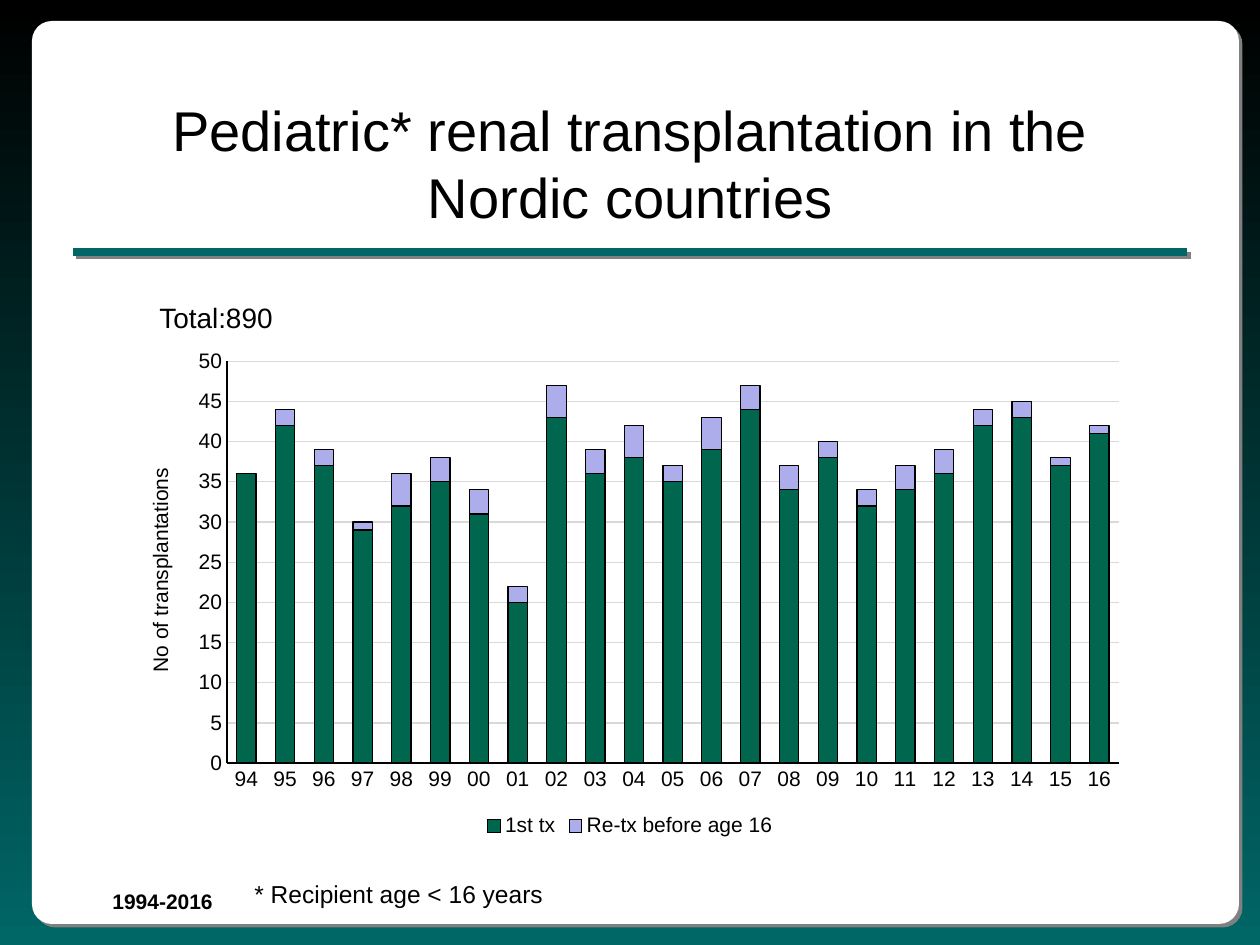
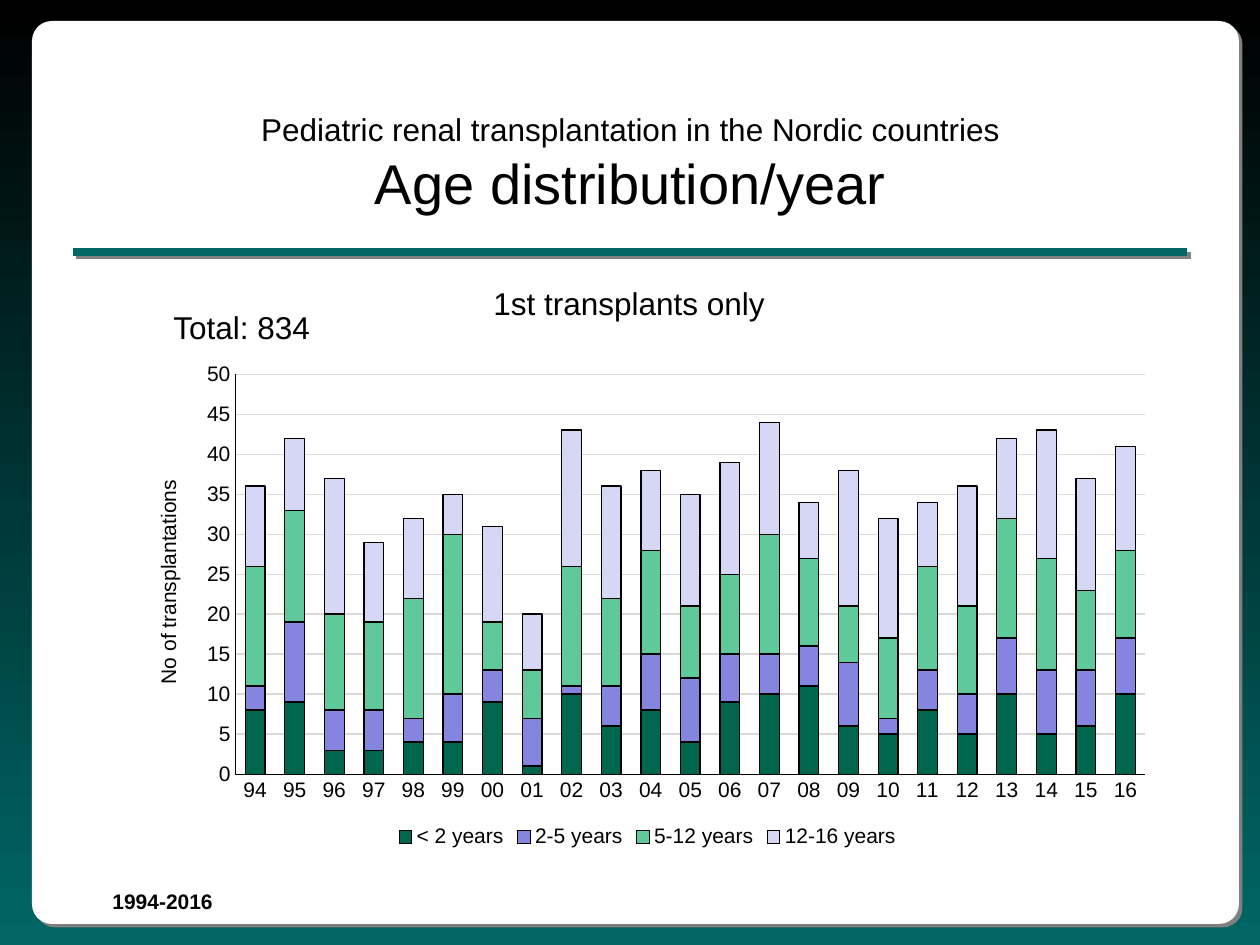
from dataclasses import dataclass

from lxml.etree import SubElement
from pptx import Presentation
from pptx.chart.data import CategoryChartData
from pptx.dml.color import RGBColor
from pptx.enum.chart import XL_CHART_TYPE, XL_LEGEND_POSITION, XL_TICK_MARK
from pptx.enum.shapes import MSO_CONNECTOR, MSO_SHAPE
from pptx.enum.text import MSO_ANCHOR, MSO_AUTO_SIZE, PP_ALIGN
from pptx.oxml.ns import qn
from pptx.util import Pt

PIXEL = 914400 / 126


@dataclass(frozen=True)
class Theme:
    font: str = "Arial"
    black: str = "000000"
    white: str = "FFFFFF"
    teal: str = "006666"
    shadow: str = "808080"
    grid: str = "D9D9D9"
    first_transplant: str = "00664D"
    retransplant: str = "ADADEB"
    ages: tuple = ("00664D", "8585E0", "60C99C", "D6D6F5")
    title_size: int = 32
    subtitle_size: int = 18
    total_size: int = 16
    note_size: int = 14
    small_size: int = 12
    stripe_width: float = 4.5
    hairline: float = 0.75


@dataclass(frozen=True)
class Box:
    left: int
    top: int
    width: int
    height: int

    def inside(self, left, top, width, height):
        return Box(self.left + left, self.top + top, width, height)

    def emu(self):
        return [emu(n) for n in (self.left, self.top, self.width, self.height)]


THEME = Theme()
CARD = Box(32, 21, 1207, 903)
YEARS = [f"{year % 100:02d}" for year in range(1994, 2017)]


def emu(pixels):
    return round(pixels * PIXEL)


def rgb(value):
    return RGBColor.from_string(value)


def set_values(target, values):
    for name, value in values.items():
        setattr(target, name, value)


def style_font(font, size, bold=False):
    set_values(font, {"name": THEME.font, "size": Pt(size), "bold": bold})
    font.color.rgb = rgb(THEME.black)


def style_line(line, color, width=THEME.hairline):
    line.color.rgb = rgb(color)
    line.width = Pt(width)


def cast_shadow(shape):
    effects = SubElement(shape.element.spPr, qn("a:effectLst"))
    shadow = SubElement(
        effects, qn("a:outerShdw"), dist=str(emu(5)), dir="2700000", algn="ctr", rotWithShape="0"
    )
    SubElement(shadow, qn("a:srgbClr"), val=THEME.shadow)


def add_label(slide, box, text, size, bold=False, wrap=False):
    shape = slide.shapes.add_textbox(*box.emu())
    set_values(shape.text_frame, {"word_wrap": wrap, "auto_size": MSO_AUTO_SIZE.SHAPE_TO_FIT_TEXT})
    run = shape.text_frame.paragraphs[0].add_run()
    run.text = text
    style_font(run.font, size, bold)
    return shape


def draw_frame(slide, box):
    card = slide.shapes.add_shape(MSO_SHAPE.ROUNDED_RECTANGLE, *box.emu())
    card.adjustments[0] = 0.022
    card.fill.solid()
    card.fill.fore_color.rgb = rgb(THEME.white)
    card.line.fill.background()
    cast_shadow(card)

    period = add_label(
        slide, box.inside(68, 861, 185, 38), "1994-2016", THEME.small_size, bold=True, wrap=True
    )

    left, top, width, _ = box.inside(41, 231, 1114, 0).emu()
    stripe = slide.shapes.add_connector(MSO_CONNECTOR.STRAIGHT, left, top, left + width, top)
    style_line(stripe.line, THEME.teal, THEME.stripe_width)
    cast_shadow(stripe)
    return card, period, stripe


def prepare_layout(layout, slide, box):
    fill = layout.background.fill
    fill.gradient()
    fill.gradient_angle = 270
    for stop, color in zip(fill.gradient_stops, (THEME.black, THEME.teal)):
        stop.color.rgb = rgb(color)

    title, *unused = list(layout.placeholders)
    for placeholder in unused:
        placeholder.element.getparent().remove(placeholder.element)
    left, top, width, height = box.inside(63, 63, 1071, 158).emu()
    set_values(title, {"left": left, "top": top, "width": width, "height": height})
    set_values(
        title.text_frame,
        {"vertical_anchor": MSO_ANCHOR.MIDDLE, "auto_size": MSO_AUTO_SIZE.NONE, "word_wrap": True},
    )

    for position, shape in enumerate(draw_frame(slide, box), start=2):
        layout.shapes.element.insert(position, shape.element)


def write_title(slide, lines):
    frame = slide.shapes.title.text_frame
    for index, (text, size) in enumerate(lines):
        paragraph = frame.add_paragraph() if index else frame.paragraphs[0]
        paragraph.alignment = PP_ALIGN.CENTER
        run = paragraph.add_run()
        run.text = text
        style_font(run.font, size)


def style_axes(chart):
    for axis in (chart.category_axis, chart.value_axis):
        set_values(
            axis, {"major_tick_mark": XL_TICK_MARK.NONE, "minor_tick_mark": XL_TICK_MARK.NONE}
        )
        style_font(axis.tick_labels.font, THEME.small_size)
        style_line(axis.format.line, THEME.black)

    axis = chart.value_axis
    set_values(
        axis,
        {"minimum_scale": 0, "maximum_scale": 50, "major_unit": 5, "has_major_gridlines": True},
    )
    style_line(axis.major_gridlines.format.line, THEME.grid)
    run = axis.axis_title.text_frame.paragraphs[0].add_run()
    run.text = "No of transplantations"
    style_font(run.font, THEME.small_size)
    body = axis.axis_title.element.find(".//" + qn("a:bodyPr"))
    body.set("rot", "-5400000")
    body.set("vert", "horz")


def draw_stacked_columns(slide, box, groups):
    data = CategoryChartData()
    data.categories = YEARS
    for name, _, values in groups:
        data.add_series(name, values)
    chart = slide.shapes.add_chart(XL_CHART_TYPE.COLUMN_STACKED, *box.emu(), data).chart
    set_values(chart, {"has_title": False, "has_legend": True})
    style_font(chart.font, 10)
    set_values(
        chart.legend, {"position": XL_LEGEND_POSITION.BOTTOM, "include_in_layout": False}
    )
    style_font(chart.legend.font, THEME.small_size)
    style_axes(chart)

    plot = chart.plots[0]
    set_values(plot, {"gap_width": 100, "overlap": 100, "vary_by_categories": False})
    for series, (_, color, _) in zip(plot.series, groups):
        series.format.fill.solid()
        series.format.fill.fore_color.rgb = rgb(color)
        style_line(series.format.line, THEME.black)


def draw_transplantations(slide, box):
    groups = [
        ("1st tx", THEME.first_transplant,
         [36, 42, 37, 29, 32, 35, 31, 20, 43, 36, 38, 35,
          39, 44, 34, 38, 32, 34, 36, 42, 43, 37, 41]),
        ("Re-tx before age 16", THEME.retransplant,
         [0, 2, 2, 1, 4, 3, 3, 2, 4, 3, 4, 2, 4, 3, 3, 2, 2, 3, 3, 2, 2, 1, 1]),
    ]
    write_title(
        slide, [("Pediatric* renal transplantation in the Nordic countries", THEME.title_size)]
    )
    draw_stacked_columns(slide, box, groups)
    add_label(slide, box.inside(26, -46, 140, 47), "Total:890", THEME.total_size)
    add_label(
        slide, box.inside(121, 533, 315, 43), "* Recipient age < 16 years", THEME.note_size
    )


def draw_age_distribution(slide, box):
    names = ("< 2 years", "2-5 years", "5-12 years", "12-16 years")
    values = [
        [8, 9, 3, 3, 4, 4, 9, 1, 10, 6, 8, 4, 9, 10, 11, 6, 5, 8, 5, 10, 5, 6, 10],
        [3, 10, 5, 5, 3, 6, 4, 6, 1, 5, 7, 8, 6, 5, 5, 8, 2, 5, 5, 7, 8, 7, 7],
        [15, 14, 12, 11, 15, 20, 6, 6, 15, 11, 13, 9, 10, 15, 11, 7, 10, 13, 11, 15, 14, 10, 11],
        [10, 9, 17, 10, 10, 5, 12, 7, 17, 14, 10, 14, 14, 14, 7, 17, 15, 8, 15, 10, 16, 14, 13],
    ]
    write_title(
        slide,
        [
            ("Pediatric renal transplantation in the Nordic countries", THEME.subtitle_size),
            ("Age distribution/year", THEME.title_size),
        ],
    )
    draw_stacked_columns(slide, box, list(zip(names, THEME.ages, values)))
    add_label(slide, box.inside(32, -51, 164, 50), "Total: 834", THEME.subtitle_size)
    add_label(slide, box.inside(352, -75, 300, 50), "1st transplants only", THEME.subtitle_size)


def main():
    presentation = Presentation()
    presentation.slide_width = emu(1260)
    presentation.slide_height = emu(945)
    layout = presentation.slide_layouts[5]
    first, second = [presentation.slides.add_slide(layout) for _ in range(2)]
    prepare_layout(layout, first, CARD)
    draw_transplantations(first, Box(121, 340, 1018, 502))
    draw_age_distribution(second, Box(129, 353, 1037, 500))
    presentation.save("out.pptx")


if __name__ == "__main__":
    main()
